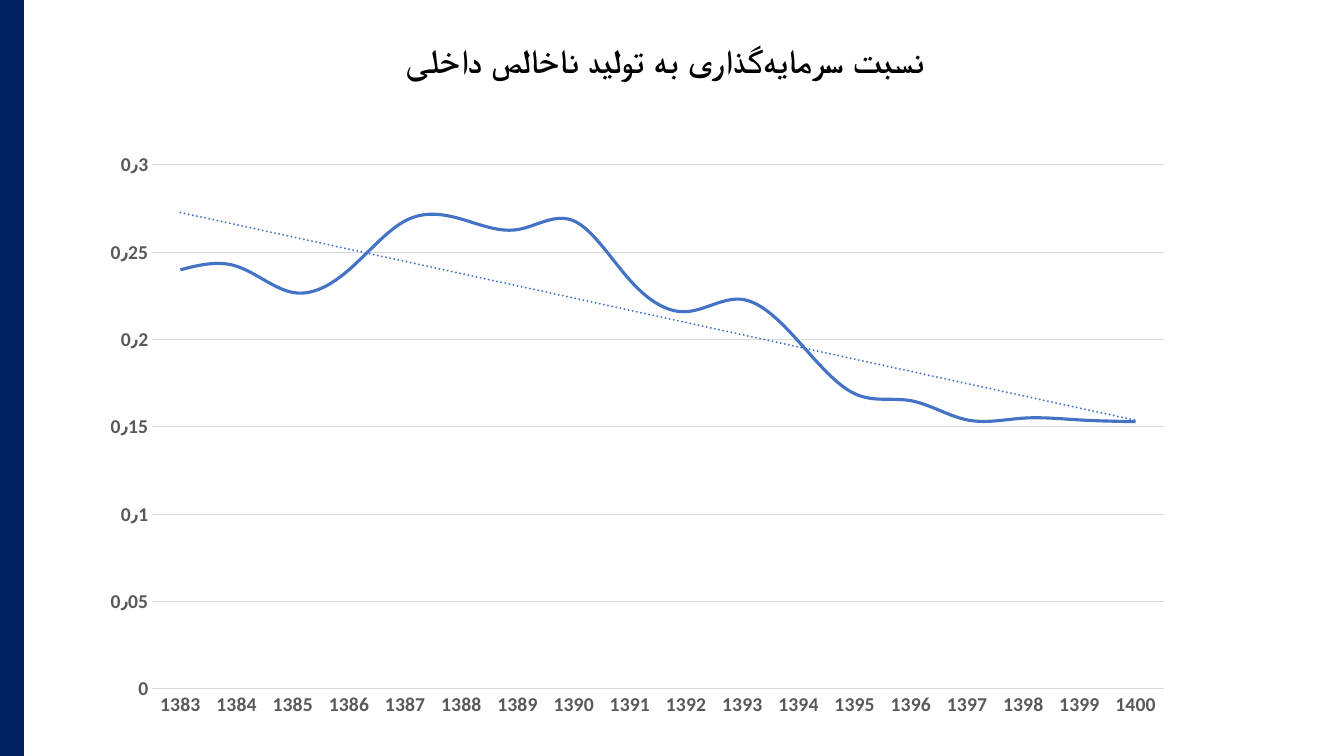
from pptx import Presentation
from pptx.chart.data import CategoryChartData
from pptx.dml.color import RGBColor
from pptx.enum.chart import XL_CHART_TYPE, XL_MARKER_STYLE, XL_TICK_MARK
from pptx.enum.shapes import MSO_SHAPE
from pptx.enum.text import MSO_AUTO_SIZE, PP_ALIGN
from pptx.oxml import parse_xml
from pptx.oxml.ns import nsdecls, qn
from pptx.util import Inches, Pt

NAVY = RGBColor(0x00, 0x20, 0x60)
BLUE = RGBColor(0x44, 0x72, 0xC4)
BLACK = RGBColor(0x00, 0x00, 0x00)
GREY = RGBColor(0x59, 0x59, 0x59)
LIGHT_GREY = RGBColor(0xD9, 0xD9, 0xD9)

NON_JOINER = chr(0x200C)
TITLE = NON_JOINER.join(["نسبت سرمایه", "گذاری به تولید ناخالص داخلی"])
TITLE_FONT = {"name": "Calibri", "size": Pt(24), "bold": True}
AXIS_FONT = {"name": "Calibri", "size": Pt(14), "bold": True}
YEARS = [str(year) for year in range(1383, 1401)]
RATIOS = [0.24, 0.242, 0.227, 0.24, 0.268, 0.269, 0.263, 0.268, 0.234,
          0.216, 0.223, 0.199, 0.169, 0.165, 0.154, 0.155, 0.154, 0.153]


def style_font(font, values, color):
    """Apply a dict of font values and a colour."""
    for name, value in values.items():
        setattr(font, name, value)
    font.color.rgb = color


def style_line(line, color, width):
    """Set the colour and width of a line."""
    line.color.rgb = color
    line.width = Pt(width)


def add_side_bar(s, height):
    """Add the navy bar along the left edge."""
    sp = s.shapes.add_shape(MSO_SHAPE.RECTANGLE, 0, 0, Inches(0.23), height)
    sp.shadow.inherit = False
    sp.fill.solid()
    sp.fill.fore_color.rgb = NAVY
    style_line(sp.line, NAVY, 1)


def add_title(s):
    """Add the centred right-to-left title."""
    sp = s.shapes.add_textbox(Inches(3.09), Inches(0.35), Inches(7.01), Inches(0.5))
    tf = sp.text_frame
    tf.word_wrap = True
    tf.auto_size = MSO_AUTO_SIZE.SHAPE_TO_FIT_TEXT
    p = tf.paragraphs[0]
    p.alignment = PP_ALIGN.CENTER
    p._p.get_or_add_pPr().set("rtl", "1")
    r = p.add_run()
    r.text = TITLE
    style_font(r.font, TITLE_FONT, BLACK)


def style_axis(axis, number_format):
    """Set the labels, number format and tick marks of an axis."""
    axis.major_tick_mark = axis.minor_tick_mark = XL_TICK_MARK.NONE
    labels = axis.tick_labels
    labels.number_format = number_format
    labels.number_format_is_linked = False
    style_font(labels.font, AXIS_FONT, GREY)


def add_trend_line(series):
    """Add a dotted linear trend line to a series."""
    trend = parse_xml(
        f'<c:trendline {nsdecls("c", "a")}><c:spPr>'
        f'<a:ln w="{Pt(1.5)}" cap="rnd"><a:solidFill><a:srgbClr val="{BLUE}"/></a:solidFill>'
        '<a:prstDash val="sysDot"/></a:ln></c:spPr><c:trendlineType val="linear"/>'
        '<c:dispRSqr val="0"/><c:dispEq val="0"/></c:trendline>')
    series._element.find(qn("c:cat")).addprevious(trend)


def add_ratio_chart(s):
    """Add the smoothed line chart of yearly ratios."""
    data = CategoryChartData()
    data.categories = YEARS
    data.add_series("Series 1", RATIOS)
    chart = s.shapes.add_chart(XL_CHART_TYPE.LINE, Inches(0.88), Inches(1.4),
                               Inches(10.88), Inches(5.83), data).chart
    chart.has_title = chart.has_legend = False
    style_font(chart.font, {"name": "Calibri", "size": Pt(10)}, BLACK)

    years, ratios = chart.category_axis, chart.value_axis
    style_axis(years, "[$-3010000]0")
    style_line(years.format.line, LIGHT_GREY, 0.75)
    style_axis(ratios, "[$-3010000]General")
    ratios.minimum_scale, ratios.maximum_scale, ratios.major_unit = 0, 0.3, 0.05
    ratios.format.line.fill.background()
    style_line(ratios.major_gridlines.format.line, LIGHT_GREY, 0.75)

    plot = chart.plots[0]
    plot.vary_by_categories = False
    series = plot.series[0]
    series.smooth = True
    series.marker.style = XL_MARKER_STYLE.NONE
    style_line(series.format.line, BLUE, 2.25)
    add_trend_line(series)


def main():
    """Build and save the slide."""
    prs = Presentation()
    prs.slide_width, prs.slide_height = Inches(13.33), Inches(7.5)
    s = prs.slides.add_slide(prs.slide_layouts[6])
    add_side_bar(s, prs.slide_height)
    add_ratio_chart(s)
    add_title(s)
    prs.save("out.pptx")


if __name__ == "__main__":
    main()
